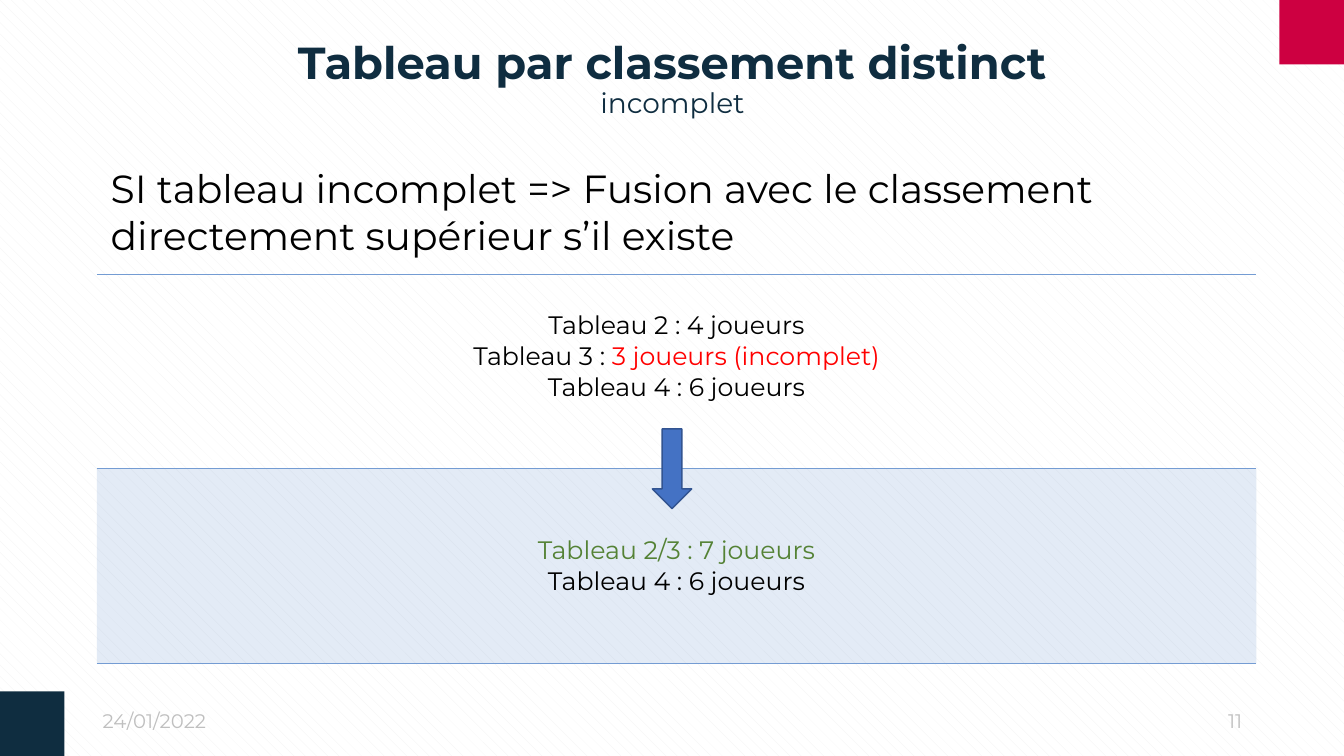
from lxml import etree
from pptx import Presentation
from pptx.dml.color import RGBColor
from pptx.enum.dml import MSO_PATTERN
from pptx.enum.shapes import MSO_SHAPE
from pptx.enum.text import MSO_ANCHOR, MSO_AUTO_SIZE, PP_ALIGN
from pptx.oxml.ns import qn
from pptx.util import Inches, Pt

NAVY = RGBColor(0x0F, 0x2D, 0x40)
CRIMSON = RGBColor(0xCD, 0x00, 0x41)
BLACK = RGBColor(0x00, 0x00, 0x00)
WHITE = RGBColor(0xFF, 0xFF, 0xFF)
PALE_GREY = RGBColor(0xF2, 0xF2, 0xF2)
GREY = RGBColor(0xBF, 0xBF, 0xBF)
RED = RGBColor(0xFF, 0x00, 0x00)
GREEN = RGBColor(0x54, 0x82, 0x35)
BLUE = RGBColor(0x44, 0x72, 0xC4)
DARK_BLUE = RGBColor(0x32, 0x54, 0x91)
TABLE_BLUE = RGBColor(0x74, 0x9C, 0xD3)

LEFT, CENTER, RIGHT = PP_ALIGN.LEFT, PP_ALIGN.CENTER, PP_ALIGN.RIGHT
TOP, MIDDLE = MSO_ANCHOR.TOP, MSO_ANCHOR.MIDDLE
RECTANGLE, DOWN_ARROW = MSO_SHAPE.RECTANGLE, MSO_SHAPE.DOWN_ARROW

FONT = "Montserrat"
NO_TABLE_STYLE = "{2D5ABB26-0587-4C30-8999-92F81FD0307C}"
WIDTH, HEIGHT = 13.33, 7.5
CORNER = 0.64

# Each row is a list of lines, each line a list of (text, color) parts.
ROWS = [
    [
        [("Tableau 2 : 4 joueurs", BLACK)],
        [("Tableau 3 : ", BLACK), ("3 joueurs (incomplet)", RED)],
        [("Tableau 4 : 6 joueurs", BLACK)],
    ],
    [
        [("Tableau 2/3 : 7 joueurs", GREEN)],
        [("Tableau 4 : 6 joueurs", BLACK)],
    ],
]


def inches(*lengths):
    return [Inches(length) for length in lengths]


def add_text(paragraph, text, size=18, color=BLACK, bold=False, align=LEFT):
    paragraph.alignment = align
    run = paragraph.add_run()
    run.text = text
    run.font.name = FONT
    run.font.size = Pt(size)
    run.font.bold = bold
    run.font.color.rgb = color


def add_text_box(slide, box, text, anchor=TOP, **text_format):
    frame = slide.shapes.add_textbox(*inches(*box)).text_frame
    frame.word_wrap = True
    frame.vertical_anchor = anchor
    add_text(frame.paragraphs[0], text, **text_format)
    return frame


def add_shape(slide, kind, box, color, line_color=None):
    shape = slide.shapes.add_shape(kind, *inches(*box))
    shape.shadow.inherit = False
    shape.fill.solid()
    shape.fill.fore_color.rgb = color
    if line_color is None:
        shape.line.fill.background()
    else:
        shape.line.color.rgb = line_color
        shape.line.width = Pt(1)


def set_cell_borders(cell):
    """Draw the horizontal edges and leave the vertical ones bare."""
    properties = cell._tc.get_or_add_tcPr()
    for index, side in enumerate(("lnL", "lnR", "lnT", "lnB")):
        line = etree.Element(qn(f"a:{side}"), w=str(Pt(1)))
        if side in ("lnT", "lnB"):
            fill = etree.SubElement(line, qn("a:solidFill"))
            etree.SubElement(fill, qn("a:srgbClr"), val=str(TABLE_BLUE))
        else:
            etree.SubElement(line, qn("a:noFill"))
        properties.insert(index, line)


def set_transparent_fill(cell, color, opacity):
    cell.fill.solid()
    cell.fill.fore_color.rgb = color
    color_element = cell._tc.tcPr.find(f"{qn('a:solidFill')}/{qn('a:srgbClr')}")
    etree.SubElement(color_element, qn("a:alpha"), val=str(opacity * 1000))


def add_background(slide):
    fill = slide.background.fill
    fill.patterned()
    fill.pattern = MSO_PATTERN.SHINGLE
    fill.fore_color.rgb = PALE_GREY
    fill.back_color.rgb = WHITE


def add_title(slide, box):
    title = slide.shapes.title
    title.left, title.top, title.width, title.height = inches(*box)
    frame = title.text_frame
    frame.auto_size = MSO_AUTO_SIZE.NONE
    frame.vertical_anchor = MIDDLE
    paragraph = frame.paragraphs[0]
    paragraph.line_spacing = 0.9
    add_text(paragraph, "Tableau par classement distinct",
             size=32, color=NAVY, bold=True, align=CENTER)
    paragraph.add_line_break()
    add_text(paragraph, "incomplet", size=20, color=NAVY, align=CENTER)


def add_groups_table(slide, box):
    table_frame = slide.shapes.add_table(len(ROWS), 1, *inches(*box))
    table = table_frame.table
    table.first_row = table.horz_banding = False
    table._tbl.tblPr.find(qn("a:tableStyleId")).text = NO_TABLE_STYLE
    for index, lines in enumerate(ROWS):
        cell = table.cell(index, 0)
        cell.vertical_anchor = MIDDLE
        frame = cell.text_frame
        for number, parts in enumerate(lines):
            paragraph = frame.add_paragraph() if number else frame.paragraphs[0]
            for text, color in parts:
                add_text(paragraph, text, color=color, align=CENTER)
        set_cell_borders(cell)
    before, after = table.cell(0, 0), table.cell(1, 0)
    before.margin_bottom = Inches(0.35)
    before.fill.background()
    set_transparent_fill(after, TABLE_BLUE, 20)


def add_merge_arrow(slide, box):
    """Centre the arrow on the line between the two rows of the table box."""
    top, height = box[1], box[3]
    arrow_width, arrow_height = 0.39, 0.79
    arrow_box = ((WIDTH - arrow_width) / 2, top + (height - arrow_height) / 2,
                 arrow_width, arrow_height)
    add_shape(slide, DOWN_ARROW, arrow_box, BLUE, DARK_BLUE)


def add_footer(slide, box):
    left, top, width, height = box
    field = 3
    for field_left, text, align in (
        (left, "24/01/2022", LEFT),
        (left + width - field, "11", RIGHT),
    ):
        add_text_box(slide, (field_left, top, field, height), text,
                     anchor=MIDDLE, size=14, color=GREY, align=align)


def add_corners(slide):
    add_shape(slide, RECTANGLE, (WIDTH - CORNER, 0, CORNER, CORNER), CRIMSON)
    add_shape(slide, RECTANGLE, (0, HEIGHT - CORNER, CORNER, CORNER), NAVY)


def add_rule(slide, box):
    text = ("SI tableau incomplet => Fusion avec le classement "
            "directement supérieur s’il existe")
    frame = add_text_box(slide, box, text, size=28)
    frame.paragraphs[0].space_after = Pt(12)


def main():
    presentation = Presentation()
    presentation.slide_width, presentation.slide_height = inches(WIDTH, HEIGHT)
    title_only = presentation.slide_layouts.get_by_name("Title Only")
    slide = presentation.slides.add_slide(title_only)
    table_box = (0.96, 2.72, 11.5, 3.86)
    add_background(slide)
    add_groups_table(slide, table_box)
    add_corners(slide)
    add_footer(slide, (0.92, 6.95, 11.5, 0.4))
    add_title(slide, (0.92, 0.4, 11.5, 0.79))
    add_merge_arrow(slide, table_box)
    add_rule(slide, (1, 1.58, 11.46, 1.04))
    presentation.save("out.pptx")


if __name__ == "__main__":
    main()
